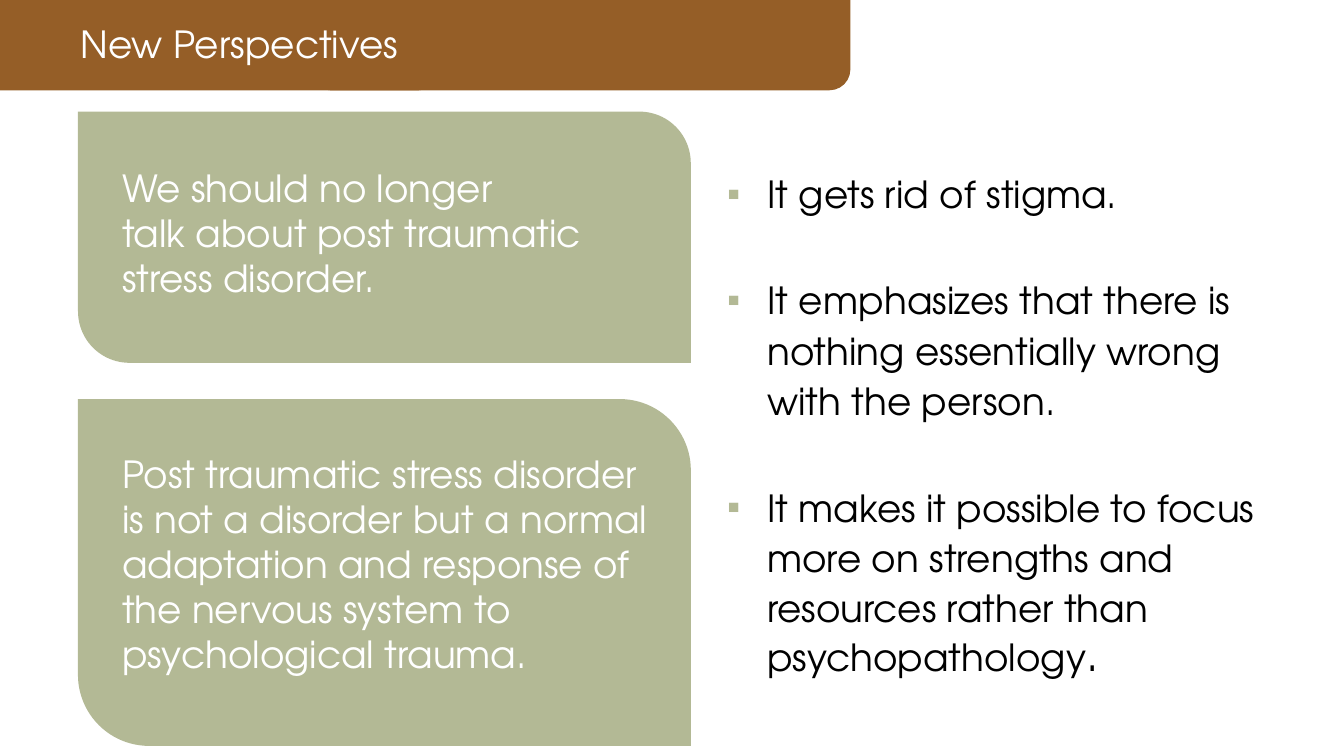
from lxml.etree import SubElement
from pptx import Presentation
from pptx.dml.color import RGBColor
from pptx.enum.shapes import MSO_SHAPE
from pptx.enum.text import MSO_ANCHOR, MSO_AUTO_SIZE, PP_ALIGN
from pptx.oxml.ns import qn
from pptx.util import Pt

COLORS = {"brown": "955E27", "sage": "B3B995", "white": "FFFFFF", "black": "000000"}
FACE = "TeX Gyre Adventor"
POINTS = [
    "It gets rid of stigma.",
    "It emphasizes that there is nothing essentially wrong with the person.",
    "It makes it possible to focus more on strengths and resources "
    "rather than psychopathology",
]
CARDS = [
    (59.8, 134.6, 85, 124.6,
     "We should no longer\vtalk about post traumatic stress disorder."),
    (213.8, 185.8, 238.3, 169.9,
     "Post traumatic stress disorder\vis not a disorder but a normal adaptation "
     "and response of the nervous system to psychological trauma."),
]


def color(name):
    return RGBColor.from_string(COLORS[name])


def place(shape, left, top, width, height):
    shape.left, shape.top = Pt(left), Pt(top)
    shape.width, shape.height = Pt(width), Pt(height)


def style(para, tint):
    para.alignment = PP_ALIGN.LEFT
    para.font.name = FACE
    para.font.size = Pt(20)
    para.font.color.rgb = color(tint)


def setup(frame, anchor):
    frame.word_wrap = True
    frame.auto_size = MSO_AUTO_SIZE.NONE
    frame.vertical_anchor = anchor


def add_block(slide, kind, box, tint, rounds):
    block = slide.shapes.add_shape(kind, *map(Pt, box))
    block.shadow.inherit = False
    block.fill.solid()
    block.fill.fore_color.rgb = color(tint)
    block.line.fill.background()
    for index, value in enumerate(rounds):
        block.adjustments[index] = value


def add_text(slide, box, text):
    frame = slide.shapes.add_textbox(*map(Pt, box)).text_frame
    setup(frame, MSO_ANCHOR.TOP)
    para = frame.paragraphs[0]
    para.text = text
    style(para, "white")


def add_bullet(para):
    props = para._p.get_or_add_pPr()
    props.set("marL", str(Pt(21.6)))
    props.set("indent", str(-Pt(21.6)))
    tint = SubElement(props, qn("a:buClr"))
    SubElement(tint, qn("a:srgbClr"), val=COLORS["sage"])
    SubElement(props, qn("a:buChar"), char="▪")


def fill_title(title):
    place(title, 36, 0, 450, 38.9)
    setup(title.text_frame, MSO_ANCHOR.BOTTOM)
    title.text_frame.text = "New Perspectives"
    style(title.text_frame.paragraphs[0], "white")


def fill_list(body):
    place(body, 382.3, 85, 317.5, 349.2)
    frame = body.text_frame
    setup(frame, MSO_ANCHOR.TOP)
    frame.text = "\n".join(POINTS)
    for index, para in enumerate(frame.paragraphs):
        add_bullet(para)
        para.line_spacing = Pt(27)
        para.space_before = Pt(30 if index else 0)
        style(para, "black")
    stop = frame.paragraphs[-1].add_run()
    stop.text = "."
    stop.font.size = Pt(24)


def main():
    deck = Presentation()
    deck.slide_width, deck.slide_height = Pt(720), Pt(405)
    slide = deck.slides.add_slide(deck.slide_layouts[1])
    title, body = slide.placeholders
    for left in (-54, 166):
        add_block(slide, MSO_SHAPE.ROUND_2_SAME_RECTANGLE,
                  (left, -17.3, 289.6, 65.7), "brown", (0, 0.17))
    for top, height, start, depth, text in CARDS:
        add_block(slide, MSO_SHAPE.ROUND_2_DIAG_RECTANGLE,
                  (41.8, top, 328.3, height), "sage", (0, 0.205))
        add_text(slide, (58.3, start, 311.8, depth), text)
    fill_title(title)
    fill_list(body)
    for holder in (title, body):
        slide.shapes.element.append(holder.element)
    deck.save("out.pptx")


if __name__ == "__main__":
    main()
